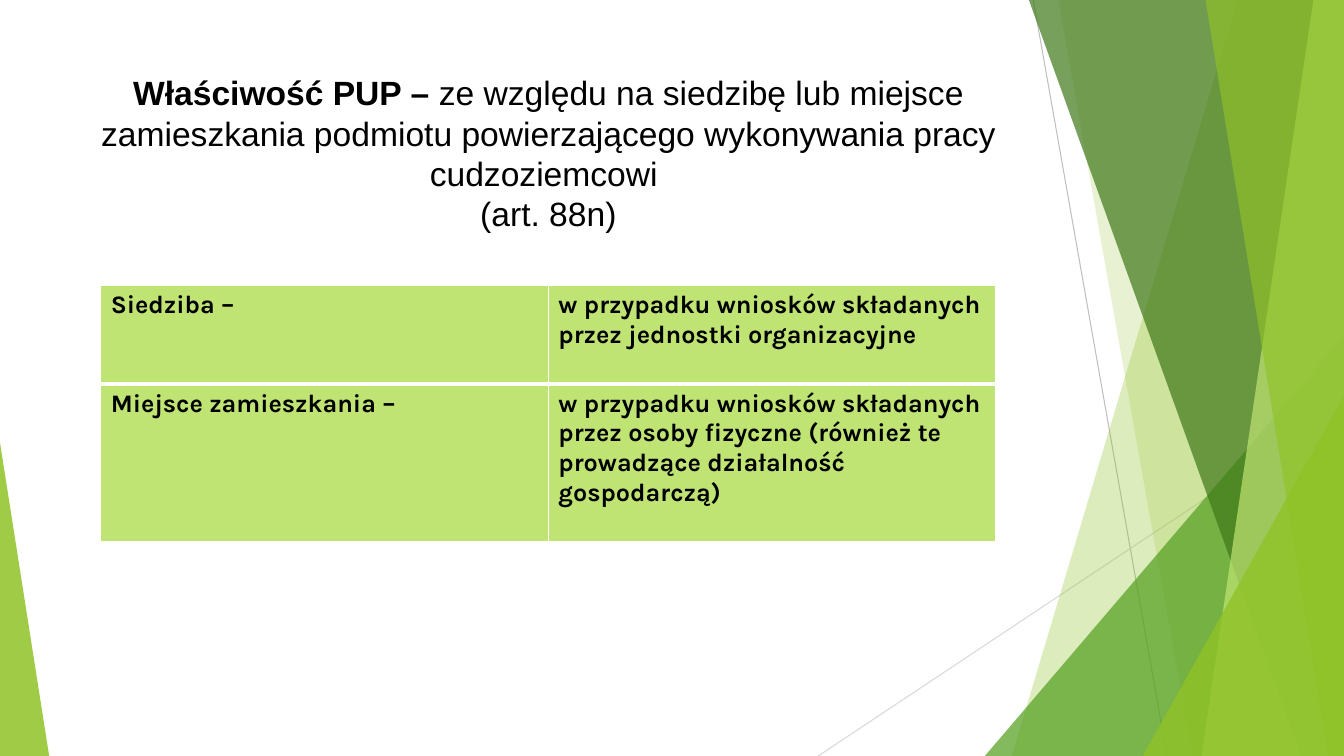
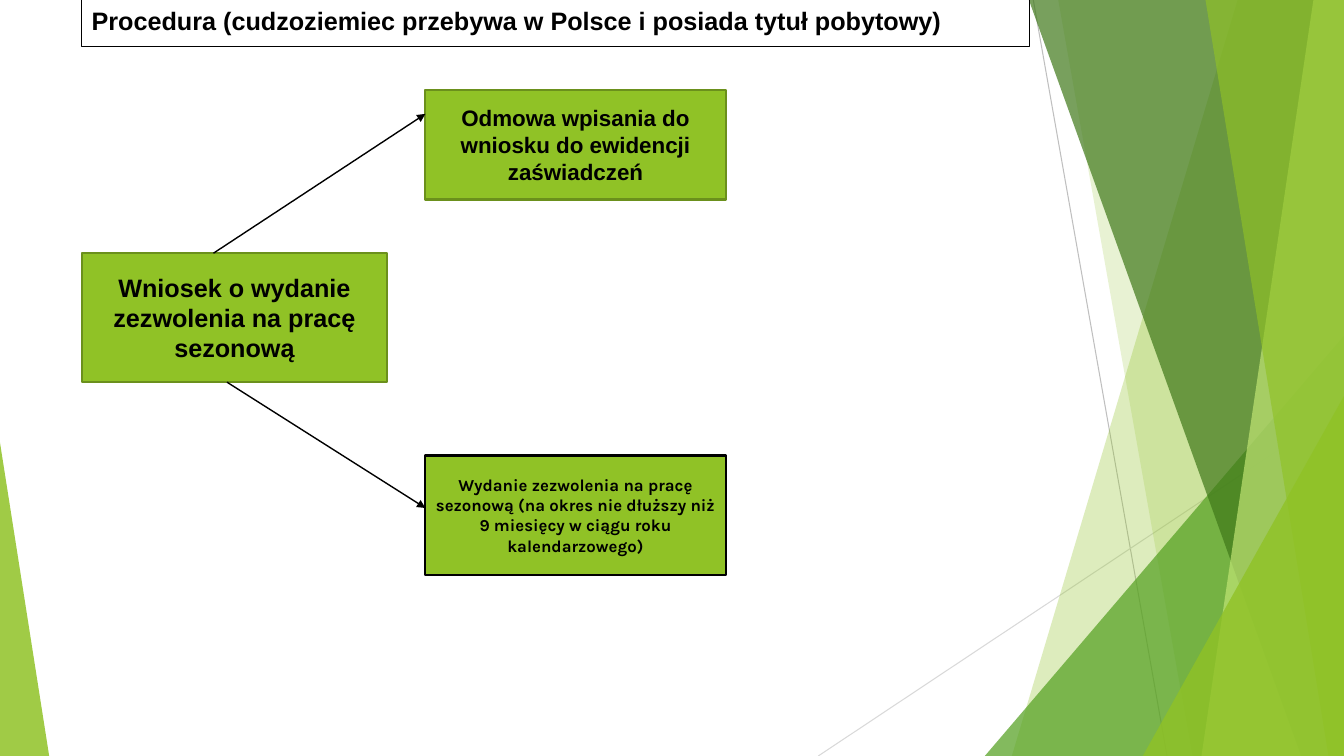
from dataclasses import dataclass

from lxml.etree import SubElement
from pptx import Presentation
from pptx.dml.color import RGBColor
from pptx.enum.shapes import MSO_CONNECTOR, MSO_SHAPE
from pptx.enum.text import MSO_ANCHOR, PP_ALIGN
from pptx.oxml.ns import qn
from pptx.util import Cm, Pt


@dataclass(frozen=True)
class Theme:
    # Colours
    black: str = "000000"
    white: str = "FFFFFF"
    green: str = "90C226"
    mid_green: str = "54A021"
    dark_green: str = "3F7819"
    light_green: str = "C0E474"
    outline: str = "6B901C"
    grey: str = "BFBFBF"
    light_grey: str = "D9D9D9"
    # Fonts and type sizes
    heading: str = "Arial"
    body: str = "Karla"
    title: int = 24
    large: int = 18
    medium: int = 16
    small: int = 12


T = Theme()
W, H = 33.87, 19.05  # slide size in cm


def rgb(color):
    return RGBColor.from_string(color)


def set_font(p, size, name=T.heading, bold=True):
    p.font.size = Pt(size)
    p.font.name = name
    p.font.bold = bold
    p.font.color.rgb = rgb(T.black)


# Decoration shared by all slides
def tint(sp, color, opacity):
    sp.shadow.inherit = False
    sp.fill.solid()
    sp.fill.fore_color.rgb = rgb(color)
    clr = sp.element.spPr.find(".//" + qn("a:srgbClr"))
    SubElement(clr, qn("a:alpha"), val=str(opacity * 1000))
    sp.line.fill.background()


def add_band(slide, x_top, x_bottom, color, opacity):
    """Fill from a slanted left edge to the right edge of the slide."""
    fb = slide.shapes.build_freeform(Cm(x_top), 0)
    fb.add_line_segments([(Cm(W), 0), (Cm(W), Cm(H)), (Cm(x_bottom), Cm(H))])
    tint(fb.convert_to_shape(), color, opacity)


def add_corner(slide, left, top, right, apex, color, opacity):
    """Triangle standing on the bottom edge of the slide."""
    sp = slide.shapes.add_shape(MSO_SHAPE.ISOSCELES_TRIANGLE, Cm(left), Cm(top),
                                Cm(right - left), Cm(H - top))
    sp.adjustments[0] = apex
    tint(sp, color, opacity)


def add_line(slide, start, end, color, width, arrow=False):
    cxn = slide.shapes.add_connector(MSO_CONNECTOR.STRAIGHT,
                                     *map(Cm, start + end))
    cxn.line.color.rgb = rgb(color)
    cxn.line.width = Pt(width)
    if arrow:
        SubElement(cxn.line._get_or_add_ln(), qn("a:tailEnd"), type="triangle")
    SubElement(cxn.element.spPr, qn("a:effectLst"))


def add_decoration(slide):
    add_line(slide, (26.04, 0), (29.41, H), T.grey, 0.75)
    add_line(slide, (W, 10.24), (20.62, H), T.light_grey, 0.75)
    add_band(slide, 31.19, 25.5, T.green, 30)
    add_band(slide, 26.67, 30.05, T.green, 20)
    add_corner(slide, 24.82, 8.46, W, 1, T.mid_green, 72)
    add_band(slide, 25.93, 32.79, T.dark_green, 70)
    add_band(slide, 33.1, 30.28, T.light_green, 70)
    add_band(slide, 30.38, 33.48, T.green, 65)
    add_corner(slide, 28.8, 9.98, W, 1, T.green, 80)
    add_corner(slide, 0, 11.15, 1.24, 0, T.green, 85)


def new_slide(prs):
    slide = prs.slides.add_slide(prs.slide_layouts[6])
    add_decoration(slide)
    return slide


# Content elements
def add_title(slide, box):
    """Add a title box and return it with its first paragraph."""
    sp = slide.shapes.add_textbox(*map(Cm, box))
    tf = sp.text_frame
    tf.word_wrap = True
    tf.vertical_anchor = MSO_ANCHOR.TOP
    return sp, tf.paragraphs[0]


def add_box(slide, box, text, size, font=T.heading, outline=T.outline):
    sp = slide.shapes.add_shape(MSO_SHAPE.RECTANGLE, *map(Cm, box))
    sp.shadow.inherit = False
    sp.fill.solid()
    sp.fill.fore_color.rgb = rgb(T.green)
    sp.line.color.rgb = rgb(outline)
    sp.line.width = Pt(1.5)
    tf = sp.text_frame
    tf.word_wrap = True
    tf.vertical_anchor = MSO_ANCHOR.MIDDLE
    p = tf.paragraphs[0]
    p.text = text
    p.alignment = PP_ALIGN.CENTER
    set_font(p, size, font)


def set_borders(cell, widths):
    tc_pr = cell._tc.get_or_add_tcPr()
    for i, (side, width) in enumerate(widths.items()):
        ln = tc_pr.makeelement(qn("a:ln" + side), {"w": str(Pt(width))})
        fill = SubElement(ln, qn("a:solidFill"))
        SubElement(fill, qn("a:srgbClr"), val=T.white)
        tc_pr.insert(i, ln)


def add_table(slide, left, top, col_width, row_heights, rows):
    cols = len(rows[0])
    table = slide.shapes.add_table(len(rows), cols, Cm(left), Cm(top),
                                   Cm(col_width * cols),
                                   Cm(sum(row_heights))).table
    table.first_row = table.horz_banding = False
    for col in table.columns:
        col.width = Cm(col_width)
    for i, (height, texts) in enumerate(zip(row_heights, rows)):
        table.rows[i].height = Cm(height)
        # Thick rule below the first row
        widths = {"L": 1, "R": 1, "T": 3 if i == 1 else 1,
                  "B": 3 if i == 0 else 1}
        for j, text in enumerate(texts):
            cell = table.cell(i, j)
            cell.fill.solid()
            cell.fill.fore_color.rgb = rgb(T.light_green)
            set_borders(cell, widths)
            p = cell.text_frame.paragraphs[0]
            p.text = text
            set_font(p, T.large, T.body)


# Slides
def jurisdiction_slide(prs):
    slide = new_slide(prs)
    _, p = add_title(slide, (1.88, 1.7, 23.88, 3.66))
    p.alignment = PP_ALIGN.CENTER
    set_font(p, T.title, bold=False)
    r = p.add_run()
    r.text = "Właściwość PUP – "
    r.font.bold = True
    p.add_run().text = ("ze względu na siedzibę lub miejsce zamieszkania podmiotu "
                        "powierzającego wykonywania pracy cudzoziemcowi ")
    p.add_line_break()
    p.add_run().text = "(art. 88n)"
    add_table(slide, 2.54, 7.19, 11.28, (2.49, 3.96), (
        ("Siedziba –",
         "w przypadku wniosków składanych przez jednostki organizacyjne"),
        ("Miejsce zamieszkania –",
         "w przypadku wniosków składanych przez osoby fizyczne "
         "(również te prowadzące działalność gospodarczą)"),
    ))


def procedure_slide(prs):
    slide = new_slide(prs)
    sp, p = add_title(slide, (2.06, 0, 23.88, 1.17))
    sp.line.color.rgb = rgb(T.black)
    sp.line.width = Pt(0.75)
    p.text = "Procedura (cudzoziemiec przebywa w Polsce i posiada tytuł pobytowy)"
    set_font(p, T.large)

    # Application and its two outcomes
    add_box(slide, (2.06, 6.38, 7.7, 3.25),
            "Wniosek o wydanie zezwolenia na pracę sezonową", T.large)
    add_box(slide, (10.72, 2.26, 7.57, 2.77),
            "Odmowa wpisania do wniosku do ewidencji zaświadczeń", T.medium)
    add_box(slide, (10.72, 11.48, 7.57, 3),
            "Wydanie zezwolenia na pracę sezonową (na okres nie dłuższy niż "
            "9 miesięcy w ciągu roku kalendarzowego)",
            T.small, T.body, T.black)
    add_line(slide, (5.38, 6.38), (10.72, 2.87), T.black, 1, arrow=True)
    add_line(slide, (5.72, 9.63), (10.72, 12.8), T.black, 1, arrow=True)


def main():
    prs = Presentation()
    prs.slide_width, prs.slide_height = Cm(W), Cm(H)
    jurisdiction_slide(prs)
    procedure_slide(prs)
    prs.save("out.pptx")


if __name__ == "__main__":
    main()
